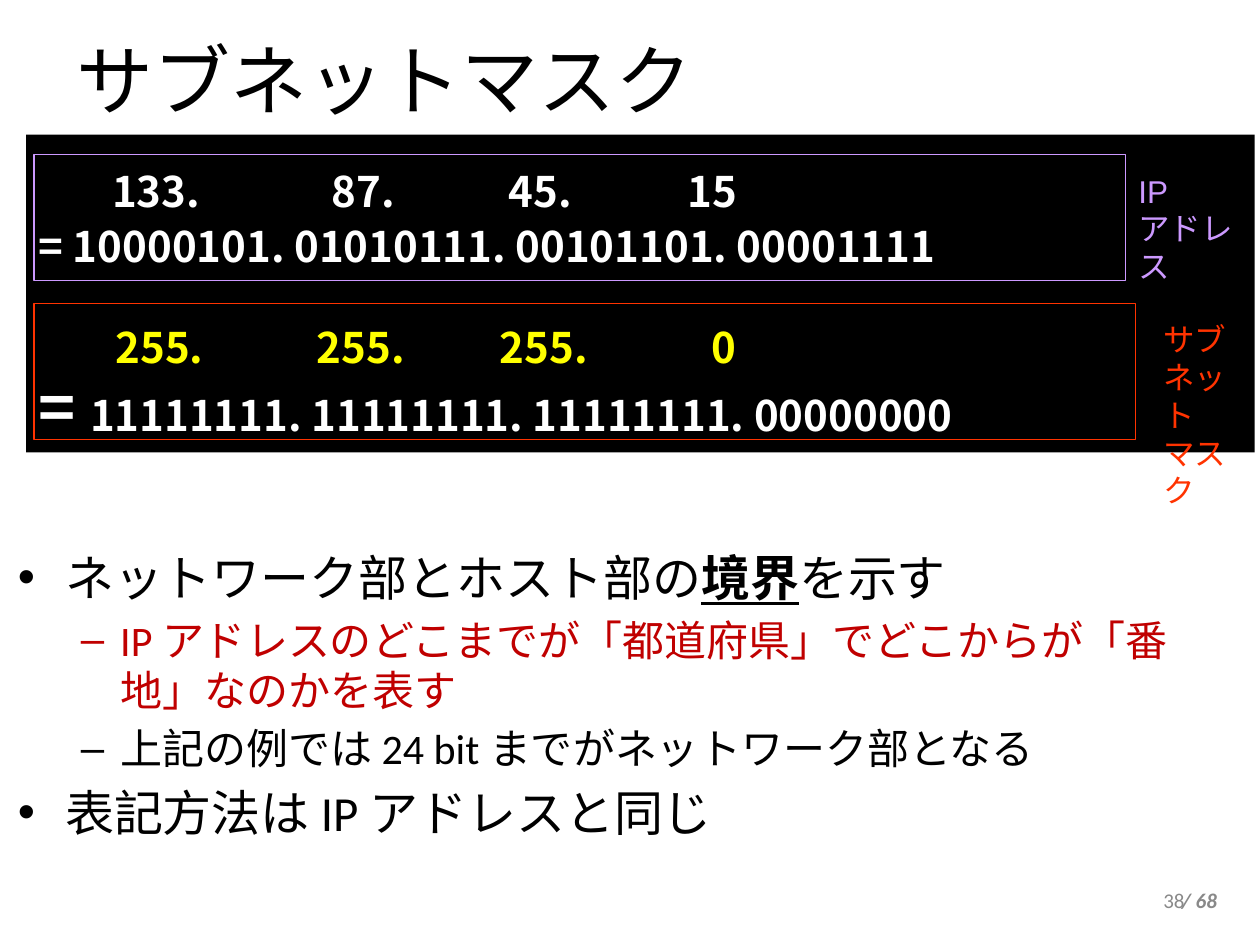
from lxml import etree
from pptx import Presentation
from pptx.dml.color import RGBColor
from pptx.enum.shapes import MSO_SHAPE
from pptx.enum.text import MSO_ANCHOR, MSO_AUTO_SIZE, PP_ALIGN
from pptx.oxml.ns import qn
from pptx.util import Pt

RECTANGLE = MSO_SHAPE.RECTANGLE
TOP, MIDDLE = MSO_ANCHOR.TOP, MSO_ANCHOR.MIDDLE
LEFT, RIGHT = PP_ALIGN.LEFT, PP_ALIGN.RIGHT
NO_FIT = MSO_AUTO_SIZE.NONE

BLACK = RGBColor(0x00, 0x00, 0x00)
WHITE = RGBColor(0xFF, 0xFF, 0xFF)
YELLOW = RGBColor(0xFF, 0xFF, 0x00)
PURPLE = RGBColor(0xCC, 0x99, 0xFF)
ORANGE = RGBColor(0xFF, 0x33, 0x00)
DARK_RED = RGBColor(0xC0, 0x00, 0x00)
GREY = RGBColor(0x89, 0x89, 0x89)

JAPANESE_FONT = "Noto Sans CJK JP"


def add_text(para, text, size, color, font="Calibri", bold=False,
             italic=False, underline=False):
    """Append text to a paragraph; a newline becomes a line break."""
    for index, line in enumerate(text.split("\n")):
        if index:
            para.add_line_break()
        span = para.add_run()
        span.text = line
        style = span.font
        style.name, style.size, style.bold = font, Pt(size), bold
        style.italic, style.underline = italic, underline
        style.color.rgb = color
        east_asian = etree.SubElement(span._r.get_or_add_rPr(), qn("a:ea"))
        east_asian.set("typeface", JAPANESE_FONT)


def place(shape, box):
    shape.left, shape.top, shape.width, shape.height = map(Pt, box)


def format_para(para, line_height, before=0, align=LEFT):
    para.line_spacing, para.space_before = Pt(line_height), Pt(before)
    para.alignment = align


def set_tabs(para, stops):
    tabs = etree.SubElement(para._p.get_or_add_pPr(), qn("a:tabLst"))
    for stop in stops:
        etree.SubElement(tabs, qn("a:tab"), pos=str(int(Pt(stop))), algn="l")


def add_rectangle(page, box, fill=None, line=None):
    shape = page.shapes.add_shape(RECTANGLE, *map(Pt, box))
    shape.shadow.inherit = False
    if fill is None:
        shape.fill.background()
    else:
        shape.fill.solid()
        shape.fill.fore_color.rgb = fill
    if line is None:
        shape.line.fill.background()
    else:
        shape.line.color.rgb = line
        shape.line.width = Pt(0.75)
    return shape


def add_label(page, box, text, size, color, line_height, anchor=TOP,
              align=LEFT, **style):
    label = page.shapes.add_textbox(*map(Pt, box))
    frame = label.text_frame
    frame.word_wrap, frame.vertical_anchor = True, anchor
    para = frame.paragraphs[0]
    format_para(para, line_height, align=align)
    add_text(para, text, size, color, **style)


def build_title(page, box):
    title = page.shapes.title
    place(title, box)
    frame = title.text_frame
    frame.vertical_anchor, frame.auto_size = MIDDLE, NO_FIT
    para = frame.paragraphs[0]
    para.alignment = LEFT
    add_text(para, "サブネットマスク", 44, BLACK)


def build_address_panel(page, box):
    left, top, width, height = box
    panel = add_rectangle(page, box, fill=BLACK)
    frame = panel.text_frame
    frame.vertical_anchor, frame.word_wrap = TOP, True

    # Rows: spans (text, size, colour), line height, space before, tab stops
    rows = [
        ([("\t133.\t87.\t45.\t15", 24, WHITE)], 43, 0, (42, 167.5, 268.5, 371)),
        ([("= 10000101. 01010111. 00101101. 00001111", 24, WHITE)], 31, 0, ()),
        ([("\t255.\t255.\t255.\t0", 24, YELLOW)], 31, 27, (44, 159, 263.5, 384.5)),
        ([("= ", 36, WHITE),
          ("11111111. 11111111. 11111111. 00000000", 24, WHITE)], 41, 0, ()),
    ]
    for index, (spans, line_height, before, stops) in enumerate(rows):
        para = frame.add_paragraph() if index else frame.paragraphs[0]
        format_para(para, line_height, before)
        if stops:
            set_tabs(para, stops)
        for text, size, color in spans:
            add_text(para, text, size, color, font=JAPANESE_FONT, bold=True)

    # Outlines with their labels
    groups = [
        (11.5, 623.5, 72, PURPLE, "IP\nアドレス", 628.5, 75),
        (96.5, 629.5, 77.5, ORANGE, "サブ\nネット\nマスク", 642.5, 62.5),
    ]
    for offset, wide, high, color, text, label_x, label_width in groups:
        add_rectangle(page, (left + 4.5, top + offset, wide, high), line=color)
        add_label(page, (left + label_x, top + offset + 6, label_width, high),
                  text, 18, color, 21.6, font="Arial")


def build_points(page, box):
    body = page.placeholders[1]
    place(body, box)
    frame = body.text_frame
    frame.auto_size, frame.vertical_anchor = NO_FIT, TOP
    points = [
        (0, BLACK, [("ネットワーク部とホスト部の", False), ("境界", True),
                    ("を示す", False)]),
        (1, DARK_RED, [("IP アドレスのどこまでが「都道府県」でどこからが「番地」"
                        "なのかを表す", False)]),
        (1, BLACK, [("上記の例では 24 bit までがネットワーク部となる", False)]),
        (0, BLACK, [("表記方法は IP アドレスと同じ", False)]),
    ]
    for index, (level, color, spans) in enumerate(points):
        para = frame.add_paragraph() if index else frame.paragraphs[0]
        para.level = level
        size = 24 if level else 28
        format_para(para, size * 1.19, size * 0.2)
        for text, strong in spans:
            add_text(para, text, size, color, bold=strong, underline=strong)


def build_page_number(page, box):
    left, top, width, height = box
    add_label(page, (left + 18.5, top, width, height), "/ 68", 12, GREY, 14.6,
              anchor=MIDDLE, align=RIGHT, bold=True, italic=True)
    add_label(page, box, "38", 12, GREY, 14.6, anchor=MIDDLE, align=RIGHT)


def main():
    deck = Presentation()
    deck.slide_width, deck.slide_height = Pt(720), Pt(540)
    page = deck.slides.add_slide(deck.slide_layouts[1])
    build_title(page, (36.5, 0, 648, 90))
    build_address_panel(page, (15, 77, 702, 181.5))
    build_points(page, (3, 309.5, 682, 186))
    build_page_number(page, (516, 500, 168, 29))
    deck.save("out.pptx")


if __name__ == "__main__":
    main()
